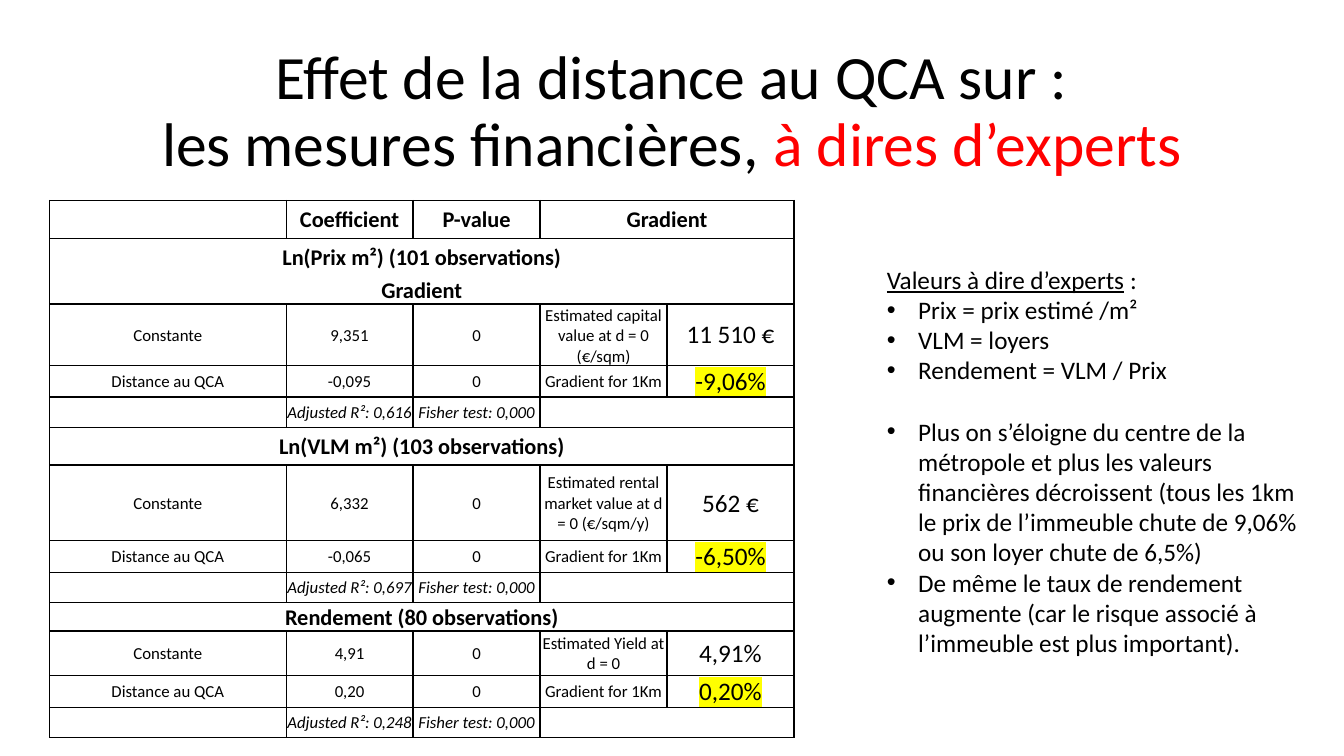
from lxml import etree
from pptx import Presentation
from pptx.dml.color import RGBColor
from pptx.enum.text import MSO_ANCHOR, MSO_AUTO_SIZE, PP_ALIGN
from pptx.oxml.ns import qn
from pptx.util import Cm, Pt

CENTER = PP_ALIGN.CENTER
MIDDLE = MSO_ANCHOR.MIDDLE
NO_AUTOFIT = MSO_AUTO_SIZE.NONE
FONT = "Calibri"
BLACK, RED, YELLOW = "000000", "FF0000", "FFFF00"


def add_run(p, text, size, color=BLACK, bold=False, italic=False, underline=False):
    r = p.add_run()
    r.text = text
    r.font.name = FONT
    r.font.size = Pt(size)
    r.font.bold = bold
    r.font.italic = italic
    r.font.underline = underline
    r.font.color.rgb = RGBColor.from_string(color)
    return r


def add_border(tcPr, index, side, visible):
    ln = etree.Element(qn(f"a:{side}"), w=str(Pt(1)))
    if visible:
        fill = etree.SubElement(ln, qn("a:solidFill"))
        etree.SubElement(fill, qn("a:srgbClr"), val=BLACK)
    else:
        etree.SubElement(ln, qn("a:noFill"))
    tcPr.insert(index, ln)


prs = Presentation()
prs.slide_width, prs.slide_height = Cm(33.87), Cm(19.05)
s = prs.slides.add_slide(prs.slide_layouts[5])

title = s.shapes.title
title.left, title.top, title.width, title.height = Cm(2.33), Cm(1.01), Cm(29.21), Cm(3.68)
tf = title.text_frame
tf.auto_size = NO_AUTOFIT
tf.vertical_anchor = MIDDLE
title_lines = [
    [("Effet de la distance au QCA sur :", BLACK)],
    [("les mesures financières, ", BLACK), ("à dires d’experts", RED)],
]
for i, runs in enumerate(title_lines):
    p = tf.add_paragraph() if i else tf.paragraphs[0]
    p.alignment = CENTER
    p.line_spacing = 0.9
    for text, color in runs:
        add_run(p, text, 44, color)

sp = s.shapes.add_textbox(Cm(22.1), Cm(6.53), Cm(11.15), Cm(10.26))
tf = sp.text_frame
tf.word_wrap = True
p = tf.paragraphs[0]
add_run(p, "Valeurs à dire d’experts", 18, underline=True)
add_run(p, " :", 18)
notes = [
    ("Prix = prix estimé /m²", 0),
    ("VLM = loyers", 0),
    ("Rendement = VLM / Prix", 0),
    ("Plus on s’éloigne du centre de la métropole et plus les valeurs financières "
     "décroissent (tous les 1km le prix de l’immeuble chute de 9,06% ou son loyer "
     "chute de 6,5%)", 22),
    ("De même le taux de rendement augmente (car le risque associé à l’immeuble "
     "est plus important).", 0),
]
for text, gap in notes:
    p = tf.add_paragraph()
    p.space_before = Pt(gap)
    pPr = p._p.get_or_add_pPr()
    pPr.set("marL", str(Cm(0.79)))
    pPr.set("indent", str(-Cm(0.79)))
    etree.SubElement(pPr, qn("a:buFont"), typeface="Arial")
    etree.SubElement(pPr, qn("a:buChar"), char="•")
    add_run(p, text, 18)

models = [
    (["Ln(Prix m²) (101 observations)", "Gradient"], "9,351",
     "Estimated capital value at d = 0 (€/sqm)", "11 510 €", "-0,095", "-9,06%", "0,616"),
    (["Ln(VLM m²) (103 observations)"], "6,332",
     "Estimated rental market value at d = 0 (€/sqm/y)", "562 €", "-0,065", "-6,50%", "0,697"),
    (["Rendement (80 observations)"], "4,91",
     "Estimated Yield at d = 0", "4,91%", "0,20", "0,20%", "0,248"),
]
rows = [("header", ["", "Coefficient", "P-value", "Gradient", ""])]
for headings, constant, label, value, slope, gradient, r2 in models:
    rows += [("heading", [heading, "", "", "", ""]) for heading in headings]
    rows += [
        ("constant", ["Constante", constant, "0", label, value]),
        ("distance", ["Distance au QCA", slope, "0", "Gradient for 1Km", gradient]),
        ("fit", ["", f"Adjusted R²: {r2}", "Fisher test: 0,000", "", ""]),
    ]
heights = [0.96, 0.94, 0.7, 1.53, 0.77, 0.77, 0.94, 1.91, 0.77, 0.77, 0.71, 1.13, 0.77, 0.77]
widths = [5.96, 3.2, 3.2, 3.2, 3.2]
merge_from = {"header": 3, "fit": 3, "heading": 0}

frame = s.shapes.add_table(len(rows), len(widths), Cm(1.25), Cm(5.05),
                           Cm(sum(widths)), Cm(sum(heights)))
table = frame.table
table.first_row = False
table.horz_banding = False
for column, width in zip(table.columns, widths):
    column.width = Cm(width)

for i, (kind, texts) in enumerate(rows):
    table.rows[i].height = Cm(heights[i])
    if kind in merge_from:
        table.cell(i, merge_from[kind]).merge(table.cell(i, 4))
    for j, text in enumerate(texts):
        cell = table.cell(i, j)
        cell.margin_left = cell.margin_right = cell.margin_top = Cm(0.03)
        cell.margin_bottom = 0
        cell.vertical_anchor = MIDDLE
        cell.fill.background()
        tcPr = cell._tc.get_or_add_tcPr()
        for k, side in enumerate(["lnL", "lnR", "lnT", "lnB"]):
            add_border(tcPr, k, side, (i, side) not in [(1, "lnB"), (2, "lnT")])
        p = cell.text_frame.paragraphs[0]
        p.alignment = CENTER
        if not text:
            etree.SubElement(p._p, qn("a:endParaRPr"), sz="1200")
            continue
        bold = kind in ("header", "heading")
        result = j == 4
        size = 16 if bold else 18 if result else 12
        r = add_run(p, text, size, bold=bold, italic=kind == "fit")
        if result and kind == "distance":
            highlight = etree.Element(qn("a:highlight"))
            etree.SubElement(highlight, qn("a:srgbClr"), val=YELLOW)
            r._r.get_or_add_rPr().find(qn("a:solidFill")).addnext(highlight)

prs.save("out.pptx")
